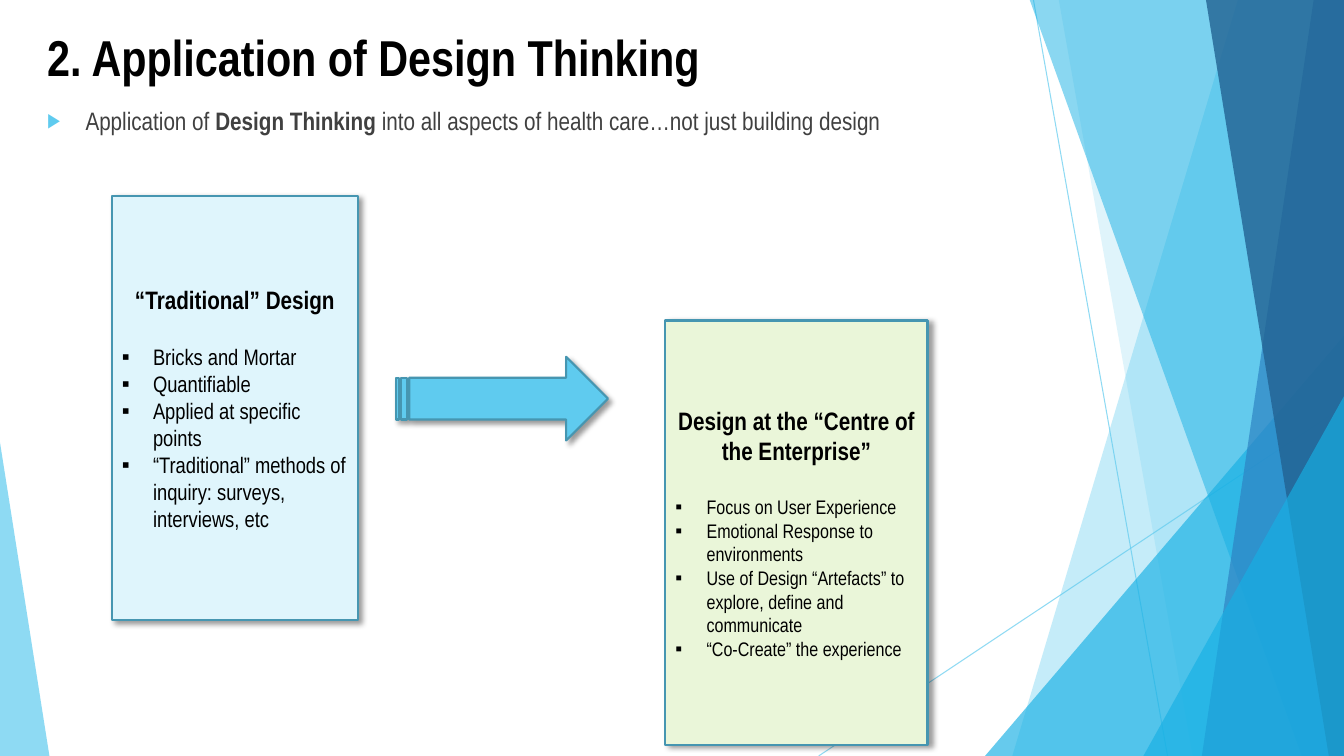
from lxml import etree
from pptx import Presentation
from pptx.dml.color import RGBColor
from pptx.enum.shapes import MSO_CONNECTOR, MSO_SHAPE
from pptx.enum.text import MSO_ANCHOR, PP_ALIGN
from pptx.oxml.ns import qn
from pptx.util import Inches, Pt

RECT = MSO_SHAPE.RECTANGLE
ARROW = MSO_SHAPE.STRIPED_RIGHT_ARROW
TRIANGLE = MSO_SHAPE.ISOSCELES_TRIANGLE
STRAIGHT = MSO_CONNECTOR.STRAIGHT
MIDDLE, TOP = MSO_ANCHOR.MIDDLE, MSO_ANCHOR.TOP
LEFT, CENTER = PP_ALIGN.LEFT, PP_ALIGN.CENTER

FONT = "Arial Narrow"
WIDE, HIGH = 13.33, 7.5
SKY, AZURE, BLUE, NAVY = "5FCBEF", "17B0E4", "2E83C3", "226292"
EDGE, BLACK, GRAY = "4696B1", "000000", "404040"

LINES = [(10.25, 0, 11.58, HIGH), (WIDE, 4.03, 8.12, HIGH)]
BACK = [(12.28, 10.04, SKY, 36), (10.5, 11.83, SKY, 20)]
FRONT = [
    (10.21, 12.91, AZURE, 50),
    (13.03, 11.92, BLUE, 70),
    (11.96, 13.18, NAVY, 80),
]
OLD = [
    "Bricks and Mortar",
    "Quantifiable",
    "Applied at specific points",
    "“Traditional” methods of inquiry: surveys, interviews, etc",
]
NEW = [
    "Focus on User Experience",
    "Emotional Response to environments",
    "Use of Design “Artefacts” to explore, define and communicate",
    "“Co-Create” the experience",
]


def color(code):
    return RGBColor.from_string(code)


def node(parent, tag, **attrs):
    item = etree.SubElement(parent, qn(tag))
    for name, value in attrs.items():
        item.set(name, str(value))
    return item


def fade(fill, alpha):
    tone = fill.find(".//" + qn("a:srgbClr"))
    node(tone, "a:alpha", val=alpha * 1000)


def paint(shape, code, alpha):
    shape.shadow.inherit = False
    shape.fill.solid()
    shape.fill.fore_color.rgb = color(code)
    shape.line.fill.background()
    fade(shape.element.spPr.find(qn("a:solidFill")), alpha)


def add_line(slide, ends):
    line = slide.shapes.add_connector(STRAIGHT, *map(Inches, ends))
    line.line.color.rgb = color(SKY)
    line.line.width = Pt(0.75)
    props = line.element.spPr
    fade(props.find(qn("a:ln")), 70)
    node(props, "a:effectLst")


def add_band(slide, top, base, code, alpha):
    points = [(WIDE, -0.01), (WIDE, HIGH), (base, HIGH)]
    path = slide.shapes.build_freeform(Inches(top), Inches(-0.01), scale=1.0)
    path.add_line_segments([(Inches(x), Inches(y)) for x, y in points], close=True)
    paint(path.convert_to_shape(), code, alpha)


def add_wedge(slide, box, peak, code, alpha):
    wedge = slide.shapes.add_shape(TRIANGLE, *map(Inches, box))
    wedge.adjustments[0] = peak
    paint(wedge, code, alpha)


def add_solid(slide, kind, box, code, angle):
    shape = slide.shapes.add_shape(kind, *map(Inches, box))
    shape.shadow.inherit = False
    shape.fill.solid()
    shape.fill.fore_color.rgb = color(code)
    shape.line.color.rgb = color(EDGE)
    shape.line.width = Pt(1.5)
    effects = shape.element.spPr.find(qn("a:effectLst"))
    shadow = node(effects, "a:outerShdw", blurRad=Pt(4), dist=Pt(3),
                  dir=angle * 60000, rotWithShape=0)
    node(node(shadow, "a:srgbClr", val=BLACK), "a:alpha", val=40000)
    return shape


def add_run(para, text, size, code, bold=False):
    run = para.add_run()
    run.text = text
    font = run.font
    font.name, font.size, font.bold = FONT, Pt(size), bold
    font.color.rgb = color(code)


def bullet(para, mark, indent, code, scale):
    props = para._p.get_or_add_pPr()
    props.set("marL", str(Inches(indent)))
    props.set("indent", str(-Inches(indent)))
    node(node(props, "a:buClr"), "a:srgbClr", val=code)
    node(props, "a:buSzPct", val=scale * 1000)
    node(props, "a:buFont", typeface="Arial")
    node(props, "a:buChar", char=mark)


def add_text(slide, box, anchor):
    frame = slide.shapes.add_textbox(*map(Inches, box)).text_frame
    frame.word_wrap = True
    frame.vertical_anchor = anchor
    return frame.paragraphs[0]


def add_card(slide, box, code, angle, title, items, size):
    frame = add_solid(slide, RECT, box, code, angle).text_frame
    frame.word_wrap = True
    frame.vertical_anchor = MIDDLE
    head = frame.paragraphs[0]
    head.alignment = CENTER
    head.space_after = Pt(21)
    add_run(head, title, 18, BLACK, True)
    for item in items:
        para = frame.add_paragraph()
        para.alignment = LEFT
        bullet(para, "▪", 0.31, BLACK, 100)
        add_run(para, item, size, BLACK)


def add_decor(slide):
    for ends in LINES:
        add_line(slide, ends)
    for band in BACK:
        add_band(slide, *band)
    add_wedge(slide, (9.77, 3.33, 3.56, 4.17), 1, AZURE, 66)
    for band in FRONT:
        add_band(slide, *band)
    add_wedge(slide, (11.34, 3.93, 1.99, 3.57), 1, AZURE, 66)
    add_wedge(slide, (0, 4.39, 0.49, 3.11), 0, SKY, 70)


def main():
    deck = Presentation()
    deck.slide_width, deck.slide_height = Inches(WIDE), Inches(HIGH)
    slide = deck.slides.add_slide(deck.slide_layouts[6])
    add_decor(slide)

    title = add_text(slide, (0.37, 0.15, 9.4, 0.81), MIDDLE)
    add_run(title, "2. Application of Design Thinking", 36, BLACK, True)

    intro = add_text(slide, (0.37, 1, 9.4, 4.24), TOP)
    bullet(intro, "▶", 0.38, SKY, 80)
    add_run(intro, "Application of ", 18, GRAY)
    add_run(intro, "Design Thinking ", 18, GRAY, True)
    add_run(intro, "into all aspects of health care…not just building design", 18, GRAY)

    add_card(slide, (1.11, 1.94, 2.44, 4.21), "DFF5FC", 45,
             "“Traditional” Design", OLD, 16)
    add_card(slide, (6.6, 3.18, 2.6, 4.21), "EAF6D9", 20,
             "Design at the “Centre of the Enterprise”", NEW, 14)
    add_solid(slide, ARROW, (3.93, 3.54, 2.1, 0.83), SKY, 45)
    deck.save("out.pptx")


if __name__ == "__main__":
    main()
